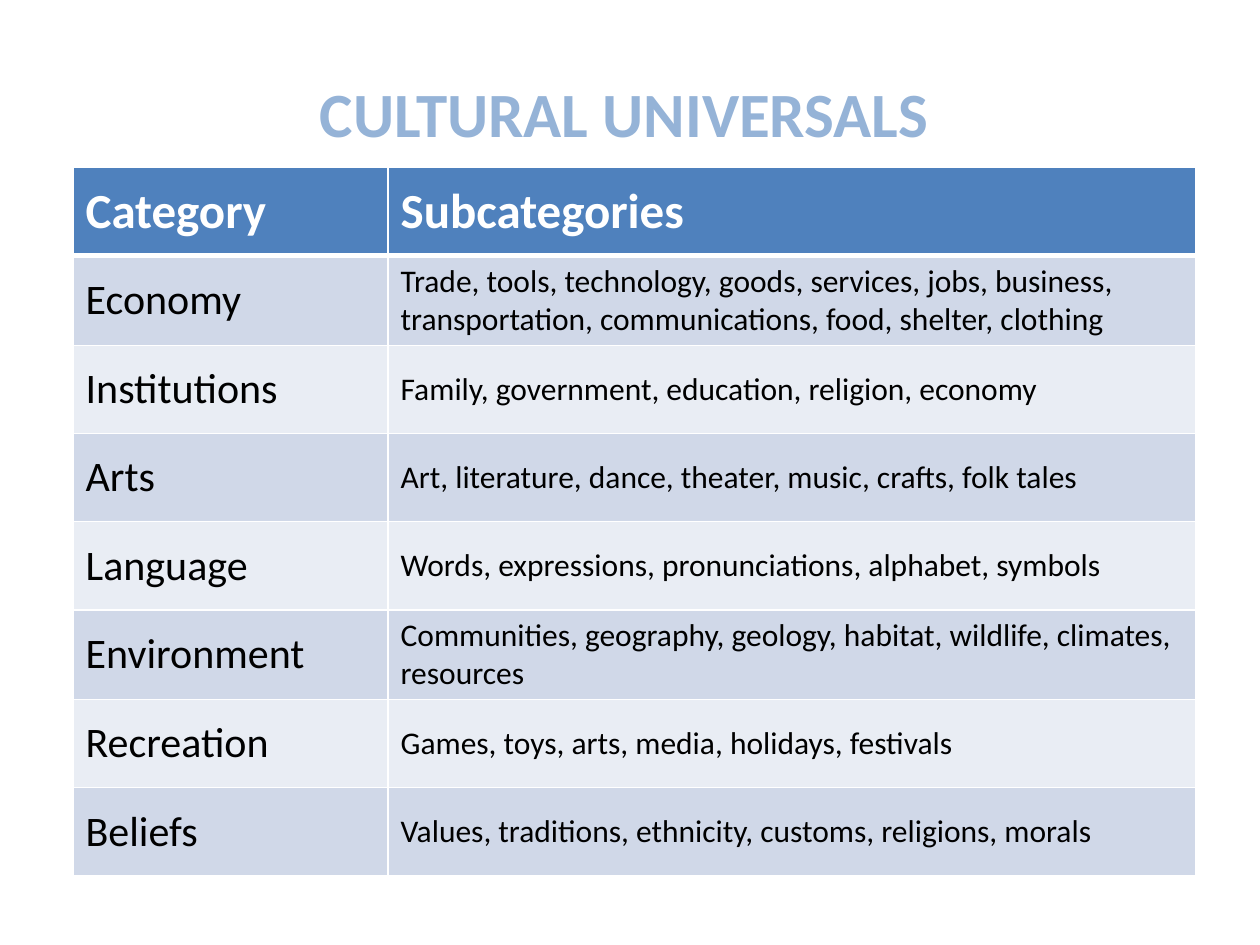
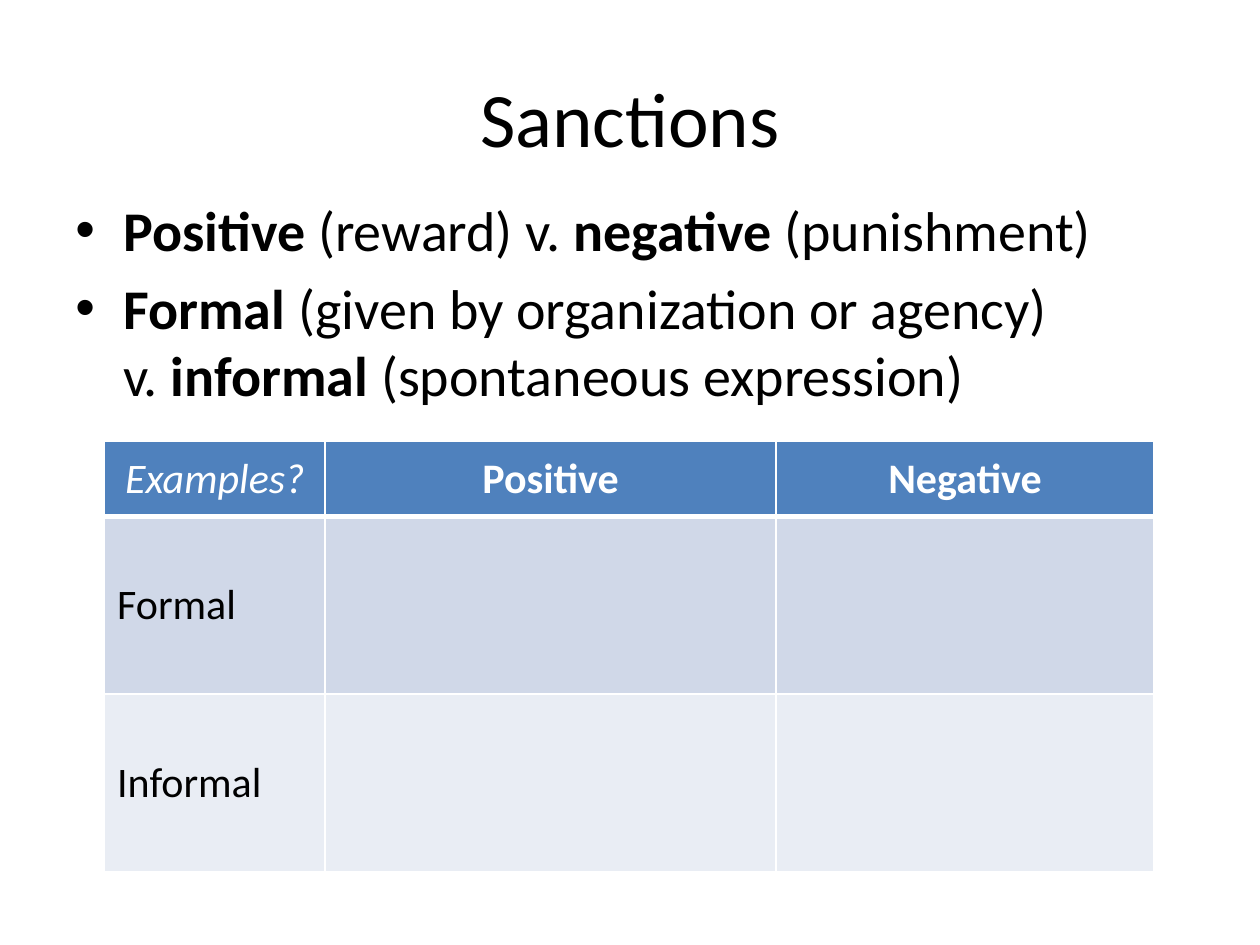
from dataclasses import dataclass

from lxml import etree
from pptx import Presentation
from pptx.dml.color import RGBColor
from pptx.enum.text import MSO_ANCHOR, MSO_AUTO_SIZE, PP_ALIGN
from pptx.oxml.ns import qn
from pptx.util import Emu, Pt

PX = 9144
CENTER = PP_ALIGN.CENTER
LEFT = PP_ALIGN.LEFT
TOP = MSO_ANCHOR.TOP
MIDDLE = MSO_ANCHOR.MIDDLE
GROW = MSO_AUTO_SIZE.SHAPE_TO_FIT_TEXT


@dataclass(frozen=True)
class Theme:
    font: str = "Calibri"
    ink: str = "000000"
    white: str = "FFFFFF"
    accent: str = "95B3D7"
    header: str = "4F81BD"
    bands: tuple = ("D0D8E8", "E9EDF4")
    title: int = 44
    heading: int = 36
    body: int = 32
    table_head: int = 28
    label: int = 24
    detail: int = 18
    border: int = 1
    header_rule: int = 3


THEME = Theme()


def px(length):
    return Emu(length * PX)


def add_span(para, text, size, color=THEME.ink, bold=False, italic=False):
    span = para.add_run()
    span.text = text
    font = span.font
    font.name, font.size = THEME.font, Pt(size)
    font.bold, font.italic = bold, italic
    font.color.rgb = RGBColor.from_string(color)


def add_box(page, left, top, width, height, anchor=TOP):
    box = page.shapes.add_textbox(px(left), px(top), px(width), px(height))
    frame = box.text_frame
    frame.word_wrap = True
    frame.vertical_anchor = anchor
    return frame


def add_title(page, place, text, size, color=THEME.ink, bold=False, anchor=TOP):
    frame = add_box(page, *place, anchor)
    para = frame.paragraphs[0]
    para.alignment = CENTER
    add_span(para, text, size, color, bold)
    return frame


def add_bullets(page, place, items):
    frame = add_box(page, *place)
    for index, spans in enumerate(items):
        para = frame.add_paragraph() if index else frame.paragraphs[0]
        para.space_before = Pt(THEME.body * 0.2)
        properties = para._p.get_or_add_pPr()
        properties.set("marL", str(px(38)))
        properties.set("indent", str(px(-38)))
        etree.SubElement(properties, qn("a:buFont"), typeface="Arial")
        etree.SubElement(properties, qn("a:buChar"), char="•")
        for text, bold in spans:
            for number, line in enumerate(text.split("\n")):
                if number:
                    para.add_line_break()
                add_span(para, line, THEME.body, bold=bold)


def set_borders(cell, row):
    properties = cell._tc.get_or_add_tcPr()
    widths = {"L": THEME.border, "R": THEME.border,
              "T": THEME.header_rule if row == 1 else THEME.border,
              "B": THEME.header_rule if row == 0 else THEME.border}
    for side, width in widths.items():
        line = etree.SubElement(properties, qn(f"a:ln{side}"), w=str(Pt(width)))
        fill = etree.SubElement(line, qn("a:solidFill"))
        etree.SubElement(fill, qn("a:srgbClr"), val=THEME.white)


def add_grid(page, left, top, widths, heights, rows, head_size, body_sizes,
             head_align=LEFT, italic_corner=False):
    frame = page.shapes.add_table(len(heights), len(widths), px(left), px(top),
                                  px(sum(widths)), px(sum(heights)))
    table = frame.table
    for column, width in zip(table.columns, widths):
        column.width = px(width)
    for row, height in enumerate(heights):
        table.rows[row].height = px(height)
        is_head = row == 0
        color = THEME.header if is_head else THEME.bands[(row - 1) % 2]
        for column, text in enumerate(rows[row]):
            cell = table.cell(row, column)
            cell.vertical_anchor = MIDDLE
            set_borders(cell, row)
            cell.fill.solid()
            cell.fill.fore_color.rgb = RGBColor.from_string(color)
            if not text:
                continue
            para = cell.text_frame.paragraphs[0]
            if is_head:
                italic = italic_corner and column == 0
                para.alignment = head_align
                add_span(para, text, head_size, THEME.white, not italic, italic)
            else:
                add_span(para, text, body_sizes[column])


def build_universals(page):
    rows = [
        ("Category", "Subcategories"),
        ("Economy", "Trade, tools, technology, goods, services, jobs, business, "
                    "transportation, communications, food, shelter, clothing"),
        ("Institutions", "Family, government, education, religion, economy"),
        ("Arts", "Art, literature, dance, theater, music, crafts, folk tales"),
        ("Language", "Words, expressions, pronunciations, alphabet, symbols"),
        ("Environment", "Communities, geography, geology, habitat, wildlife, "
                        "climates, resources"),
        ("Recreation", "Games, toys, arts, media, holidays, festivals"),
        ("Beliefs", "Values, traditions, ethnicity, customs, religions, morals"),
    ]
    add_grid(page, 58, 133, (250, 641), [70] * len(rows), rows,
             THEME.table_head, (THEME.label, THEME.detail))
    heading = add_title(page, (58, 54, 875, 71), "CULTURAL UNIVERSALS",
                        THEME.heading, THEME.accent, bold=True)
    heading.auto_size = GROW


def build_sanctions(page):
    add_title(page, (50, 30, 900, 125), "Sanctions", THEME.title, anchor=MIDDLE)
    add_bullets(page, (50, 150, 900, 208), [
        [("Positive", True), (" (reward) v. ", False),
         ("negative", True), (" (punishment)", False)],
        [("Formal", True), (" (given by organization or agency)\nv. ", False),
         ("informal", True), (" (spontaneous expression)", False)],
    ])
    rows = [("Examples?", "Positive", "Negative"),
            ("Formal", "", ""),
            ("Informal", "", "")]
    add_grid(page, 83, 350, (175, 358, 300), (60, 141, 141), rows,
             THEME.label, [THEME.label] * 3, CENTER, italic_corner=True)


def main():
    deck = Presentation()
    deck.slide_width, deck.slide_height = px(1000), px(750)
    blank = deck.slide_layouts[6]
    for build in (build_universals, build_sanctions):
        build(deck.slides.add_slide(blank))
    deck.save("out.pptx")


if __name__ == "__main__":
    main()
